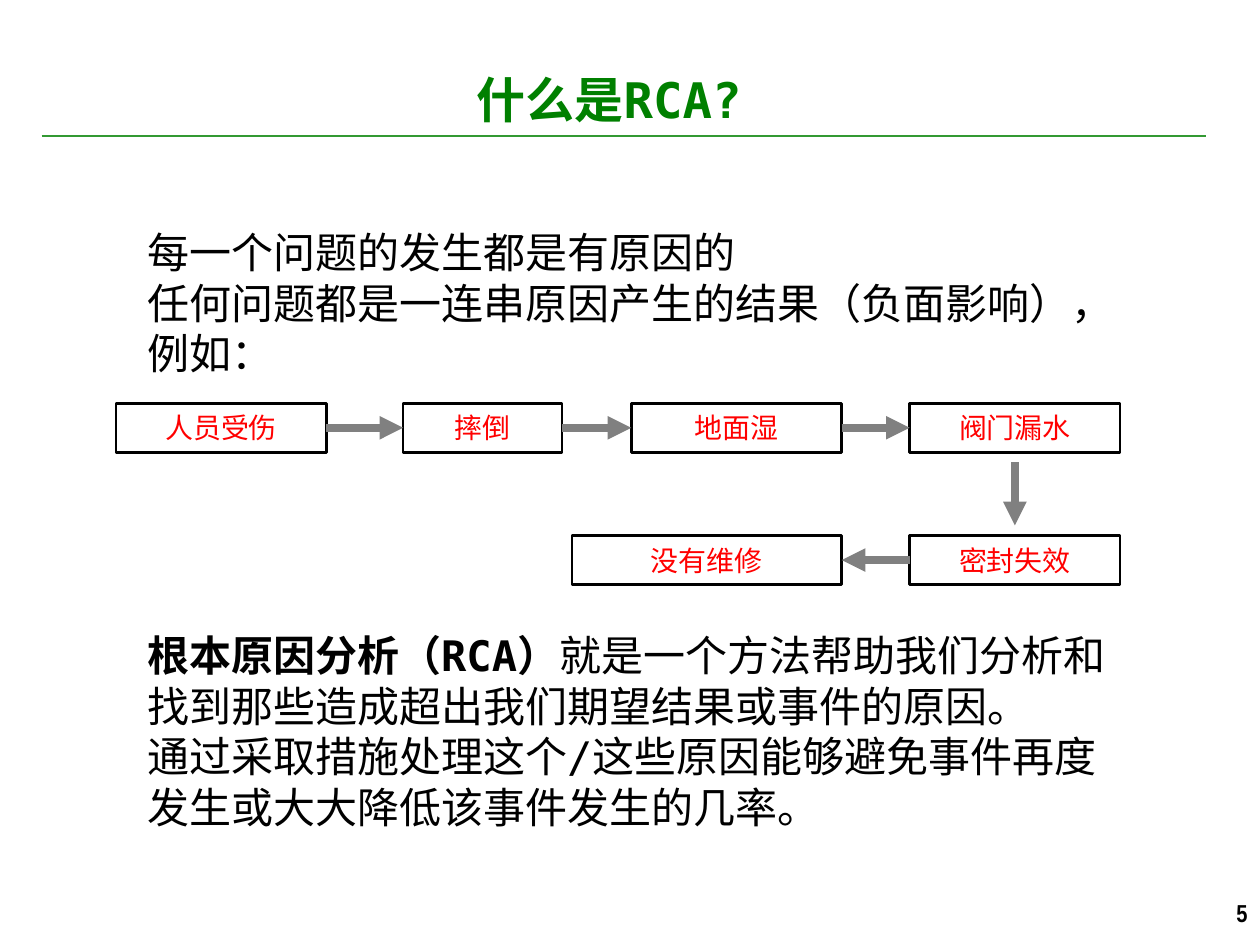
from pptx import Presentation
from pptx.dml.color import RGBColor
from pptx.enum.shapes import MSO_CONNECTOR, MSO_SHAPE
from pptx.enum.text import MSO_ANCHOR, MSO_AUTO_SIZE, PP_ALIGN
from pptx.oxml.ns import qn
from pptx.util import Inches, Pt
from lxml.etree import SubElement

FONT = "DejaVu Sans Mono"
ROW_TOPS = (3.2, 4.25)
BOX_HEIGHT = 0.39
RIGHT, LEFT = 3, 1

# Each step: name, text, left, width, row
STEPS = [
    ("injury", "人员受伤", 0.92, 1.67, 0),
    ("fall", "摔倒", 3.2, 1.26, 0),
    ("wet floor", "地面湿", 5.01, 1.67, 0),
    ("leaking valve", "阀门漏水", 7.22, 1.67, 0),
    ("failed seal", "密封失效", 7.22, 1.67, 1),
    ("no maintenance", "没有维修", 4.54, 2.14, 1),
]
# Each link: start step, its side, end step, its side
LINKS = [
    ("injury", RIGHT, "fall", LEFT),
    ("fall", RIGHT, "wet floor", LEFT),
    ("wet floor", RIGHT, "leaking valve", LEFT),
    ("failed seal", LEFT, "no maintenance", RIGHT),
]
OPENING = [
    [("每一个问题的发生都是有原因的", False)],
    [("任何问题都是一连串原因产生的结果（负面影响），例如：", False)],
]
DEFINITION = [
    [("根本原因分析（RCA）", True),
     ("就是一个方法帮助我们分析和找到那些造成超出我们期望结果或事件的原因。", False)],
    [("通过采取措施处理这个/这些原因能够避免事件再度发生或大大降低该事件发生的几率。", False)],
]


def color(value):
    return RGBColor.from_string(value)


def write(shape, paragraphs, size, fill="000000", font=FONT,
          align=PP_ALIGN.LEFT, anchor=MSO_ANCHOR.TOP):
    """Fill a shape with paragraphs, each a list of (text, bold) runs."""
    frame = shape.text_frame
    frame.word_wrap = True
    frame.auto_size = MSO_AUTO_SIZE.NONE
    frame.vertical_anchor = anchor
    for index, runs in enumerate(paragraphs):
        paragraph = frame.paragraphs[0] if index == 0 else frame.add_paragraph()
        paragraph.alignment = align
        for text, bold in runs:
            run = paragraph.add_run()
            run.text = text
            run.font.name = font
            run.font.size = Pt(size)
            run.font.bold = bold
            run.font.color.rgb = color(fill)


def add_text(slide, left, top, width, height, paragraphs, size, **style):
    box = slide.shapes.add_textbox(*map(Inches, (left, top, width, height)))
    write(box, paragraphs, size, **style)


def add_step(slide, text, left, width, row):
    box = slide.shapes.add_shape(
        MSO_SHAPE.RECTANGLE,
        *map(Inches, (left, ROW_TOPS[row], width, BOX_HEIGHT)))
    box.shadow.inherit = False
    box.fill.background()
    box.line.color.rgb = color("000000")
    box.line.width = Pt(1.5)
    write(box, [[(text, False)]], 16, fill="FF0000",
          align=PP_ALIGN.CENTER, anchor=MSO_ANCHOR.MIDDLE)
    return box


def add_line(slide, points, fill, width, arrow=False):
    line = slide.shapes.add_connector(
        MSO_CONNECTOR.STRAIGHT, *map(Inches, points))
    line.line.color.rgb = color(fill)
    line.line.width = Pt(width)
    if arrow:
        SubElement(line.line._get_or_add_ln(), qn("a:tailEnd"), type="triangle")
    SubElement(line._element.spPr, qn("a:effectLst"))
    return line


def add_arrow(slide, points=(0, 0, 0, 0)):
    return add_line(slide, points, "808080", 4.5, arrow=True)


def add_title(slide, text):
    title = slide.shapes.title
    title.left, title.top, title.width, title.height = map(
        Inches, (2, 0.5, 5.67, 0.57))
    write(title, [[(text, True)]], 28, fill="008000", align=PP_ALIGN.CENTER)


def add_cause_chain(slide):
    boxes = {name: add_step(slide, *step) for name, *step in STEPS}
    for start, start_side, end, end_side in LINKS:
        arrow = add_arrow(slide)
        arrow.begin_connect(boxes[start], start_side)
        arrow.end_connect(boxes[end], end_side)
    # The turn to the second row keeps a gap at both ends
    gap = 0.08
    _, _, left, width, _ = STEPS[3]
    middle = left + width / 2
    add_arrow(slide, (middle, ROW_TOPS[0] + BOX_HEIGHT + gap,
                      middle, ROW_TOPS[1] - gap))


def main():
    presentation = Presentation()
    presentation.slide_width = Inches(10)
    presentation.slide_height = Inches(7.5)
    slide = presentation.slides.add_slide(presentation.slide_layouts[5])

    # Heading, rule and page number
    add_line(slide, (0.33, 1.08, 9.57, 1.08), "339933", 1.5)
    add_title(slide, "什么是RCA?")
    add_text(slide, 7.67, 7.08, 2.33, 0.42, [[("5", True)]], 14,
             font="Arial Narrow", align=PP_ALIGN.RIGHT)

    # Body text around the chain of causes
    add_text(slide, 1.07, 1.75, 7.88, 1.3, OPENING, 24)
    add_text(slide, 1.07, 4.95, 7.88, 1.7, DEFINITION, 24)
    add_cause_chain(slide)

    presentation.save("out.pptx")


if __name__ == "__main__":
    main()
